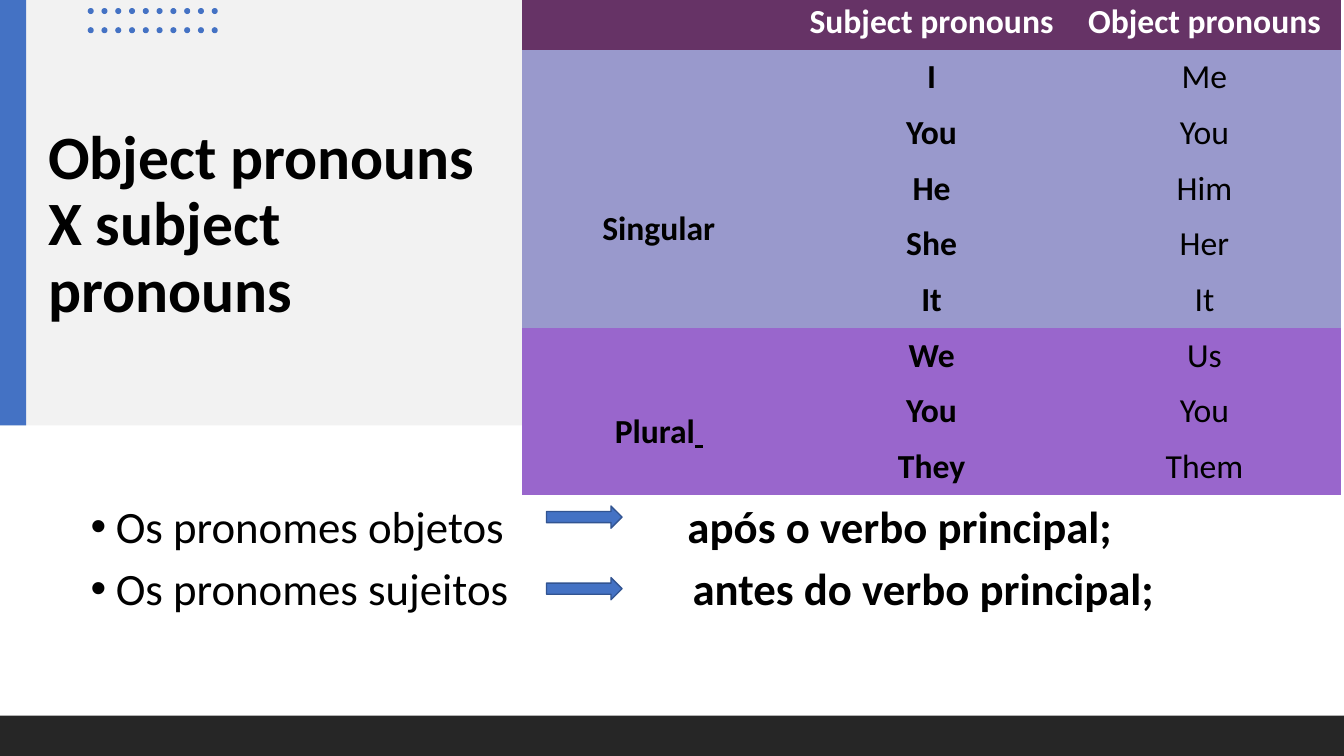
from lxml import etree
from pptx import Presentation
from pptx.dml.color import RGBColor
from pptx.enum.shapes import MSO_SHAPE
from pptx.enum.text import MSO_ANCHOR, PP_ALIGN
from pptx.oxml.ns import qn
from pptx.util import Inches, Pt

COLORS = {
    "panel": "F2F2F2", "accent": "4472C4", "arrow_line": "325491",
    "footer": "262626", "header": "663366", "singular": "9999CC",
    "plural": "9966CC", "black": "000000", "white": "FFFFFF",
}
FONT = "Calibri"
NO_GRID_STYLE = "{2D5ABB26-0587-4C30-8999-92F81FD0307C}"
HEADINGS = ["Subject pronouns", "Object pronouns"]
GROUPS = [
    ("Singular", "singular", 0.88,
     [("I", "Me"), ("You", "You"), ("He", "Him"), ("She", "Her"), ("It", "It")]),
    ("Plural", "plural", 0.48,
     [("We", "Us"), ("You", "You"), ("They", "Them")]),
]
RULES = [
    ("Os pronomes objetos", "após o verbo principal;", 5.92),
    ("Os pronomes sujeitos", "antes do verbo principal;", 5.97),
]


def rgb(name):
    return RGBColor.from_string(COLORS[name])


def add_run(p, text, size, bold=False, color="black"):
    r = p.add_run()
    r.text = text
    r.font.name = FONT
    r.font.size = Pt(size)
    r.font.bold = bold
    r.font.color.rgb = rgb(color)
    return r


def add_block(shapes, kind, x, y, w, h, fill, line=None):
    s = shapes.add_shape(kind, Inches(x), Inches(y), Inches(w), Inches(h))
    s.shadow.inherit = False
    s.fill.solid()
    s.fill.fore_color.rgb = rgb(fill)
    if line:
        s.line.color.rgb = rgb(line)
        s.line.width = Pt(1)
    else:
        s.line.fill.background()
    return s


def add_text_frame(slide, x, y, w, h):
    tf = slide.shapes.add_textbox(Inches(x), Inches(y), Inches(w), Inches(h)).text_frame
    tf.word_wrap = True
    tf.vertical_anchor = MSO_ANCHOR.MIDDLE
    return tf


def add_title_panel(slide, x, y, w, h):
    add_block(slide.shapes, MSO_SHAPE.RECTANGLE, x, y, w, h, "panel")
    p = add_text_frame(slide, x + 0.38, y + 0.7, 4.76, 3.08).paragraphs[0]
    p.line_spacing = 0.9
    add_run(p, "Object pronouns X subject pronouns", 44, True)
    add_block(slide.shapes, MSO_SHAPE.RECTANGLE, x, y, 0.26, h, "accent")
    dots = slide.shapes.add_group_shape()
    for col in range(10):
        for row in range(2):
            add_block(dots.shapes, MSO_SHAPE.OVAL, x + 0.87 + col * 1.23 / 9,
                      y + 0.08 + row * 0.19, 0.06, 0.06, "accent")


def add_bullet_and_tab(p, tab):
    ppr = p._p.get_or_add_pPr()
    ppr.set("marL", str(Inches(0.25)))
    ppr.set("indent", str(Inches(-0.25)))
    etree.SubElement(ppr, qn("a:buFont"), typeface="Arial")
    etree.SubElement(ppr, qn("a:buChar"), char="•")
    tabs = etree.SubElement(ppr, qn("a:tabLst"))
    etree.SubElement(tabs, qn("a:tab"), pos=str(Inches(tab)), algn="l")


def add_rules(slide, x, y, w, h):
    tf = add_text_frame(slide, x, y, w, h)
    tf.margin_bottom = Inches(0.3)
    for i, (pronouns, position, tab) in enumerate(RULES):
        p = tf.add_paragraph() if i else tf.paragraphs[0]
        add_bullet_and_tab(p, tab)
        p.line_spacing = 0.9
        p.space_before = Pt(10 if i else 0)
        add_run(p, pronouns + "\t", 32)
        add_run(p, position, 32, True)
        add_block(slide.shapes, MSO_SHAPE.RIGHT_ARROW, x + 4.62, y + 0.54 + i * 0.71,
                  0.75, 0.22, "accent", "arrow_line")


def fill_cell(cell, text, fill, bold=True, color="black", top=0.07):
    cell.fill.solid()
    cell.fill.fore_color.rgb = rgb(fill)
    cell.vertical_anchor = MSO_ANCHOR.MIDDLE
    cell.margin_left = cell.margin_right = cell.margin_bottom = Inches(0.07)
    cell.margin_top = Inches(top)
    p = cell.text_frame.paragraphs[0]
    p.alignment = PP_ALIGN.CENTER
    if text:
        add_run(p, text, 24, bold, color)
    return p


def add_pronoun_table(slide, x, y, w, h):
    rows = 1 + sum(len(pairs) for _, _, _, pairs in GROUPS)
    table = slide.shapes.add_table(rows, 3, Inches(x), Inches(y), Inches(w), Inches(h)).table
    table._tbl.tblPr.find(qn("a:tableStyleId")).text = NO_GRID_STYLE
    table.horz_banding = False
    for col, heading in enumerate([""] + HEADINGS):
        fill_cell(table.cell(0, col), heading, "header", color="white")
    first = 1
    for number, fill, top, pairs in GROUPS:
        label = table.cell(first, 0)
        label.merge(table.cell(first + len(pairs) - 1, 0))
        p = fill_cell(label, number, fill, top=top)
        if number == "Plural":
            add_run(p, " ", 24, True).font.underline = True
        for row, (subject, obj) in enumerate(pairs, first):
            fill_cell(table.cell(row, 1), subject, fill)
            fill_cell(table.cell(row, 2), obj, fill, bold=False)
        first += len(pairs)


def main():
    prs = Presentation()
    prs.slide_width, prs.slide_height = Inches(13.33), Inches(7.5)
    slide = prs.slides.add_slide(prs.slide_layouts[6])
    add_title_panel(slide, 0, 0, 6.18, 4.22)
    add_rules(slide, 0.8, 4.48, 11.79, 2.4)
    add_block(slide.shapes, MSO_SHAPE.RECTANGLE, 0, 7.1, 13.33, 0.4, "footer")
    add_pronoun_table(slide, 5.18, -0.06, 8.12, 4.97)
    prs.save("out.pptx")


if __name__ == "__main__":
    main()
